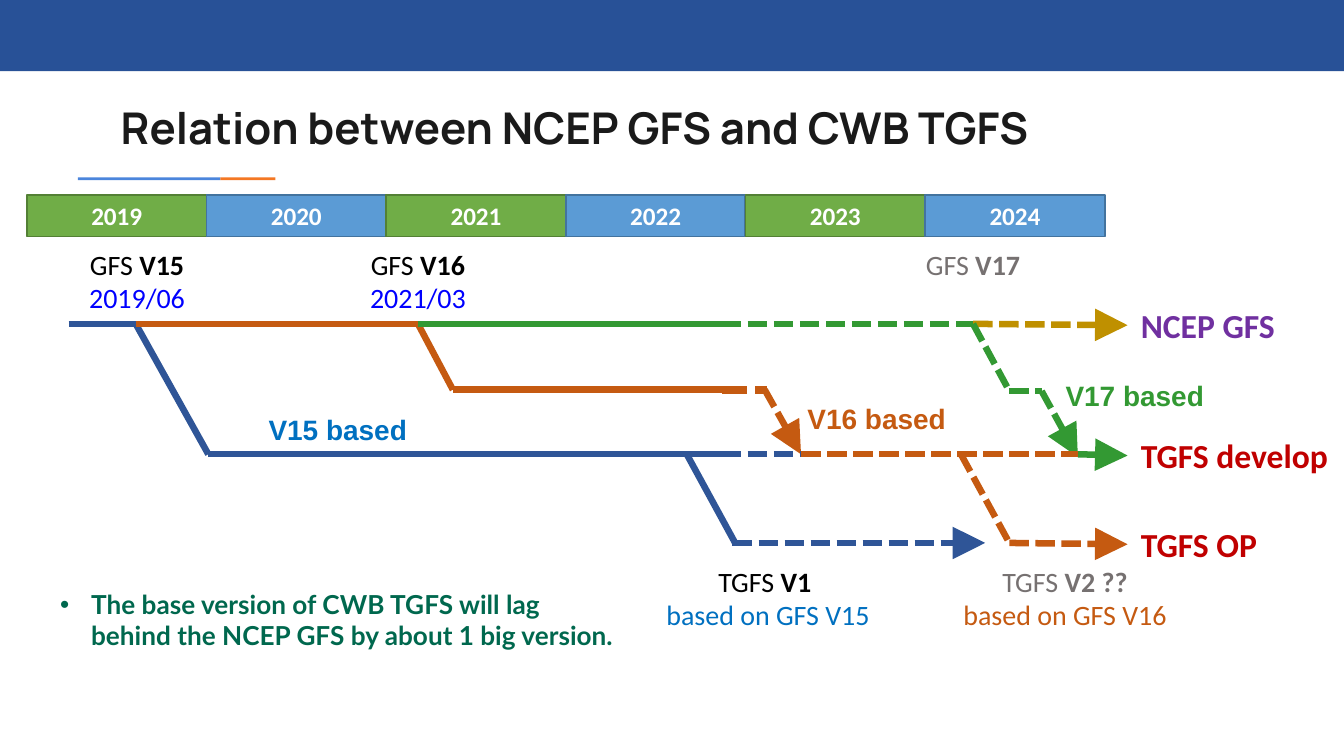
from lxml.etree import SubElement
from pptx import Presentation
from pptx.dml.color import RGBColor
from pptx.enum.shapes import MSO_CONNECTOR, MSO_SHAPE
from pptx.enum.text import MSO_ANCHOR, MSO_AUTO_SIZE, PP_ALIGN
from pptx.oxml.ns import qn
from pptx.util import Inches, Pt

COLORS = {
    "banner": "285197", "accent_blue": "4B85DC", "accent_orange": "F47723",
    "title": "1A1A1A", "note": "00684E", "black": "000000", "white": "FFFFFF",
    "navy": "2F5597", "orange": "C55A11", "green": "339933", "gold": "BF9000",
    "purple": "7030A0", "red": "C00000", "blue": "0070C0", "date": "0000FF",
    "gray": "767171", "year_green": "70AD47", "year_green_line": "538035",
    "year_blue": "5B9BD5", "year_blue_line": "43739E",
}


def rgb(name):
    return RGBColor.from_string(COLORS[name])


def style(r, size, color, font, bold=False):
    r.font.size = Pt(size)
    r.font.name = font
    r.font.bold = bold
    r.font.color.rgb = rgb(color)


def add_rect(slide, x, y, w, h, fill, line=None):
    s = slide.shapes.add_shape(MSO_SHAPE.RECTANGLE, Inches(x), Inches(y), Inches(w), Inches(h))
    s.shadow.inherit = False
    s.fill.solid()
    s.fill.fore_color.rgb = rgb(fill)
    if line:
        s.line.color.rgb = rgb(line)
        s.line.width = Pt(1)
    else:
        s.line.fill.background()
    return s


def add_text(slide, x, y, w, h, lines, size, font, align=PP_ALIGN.LEFT):
    s = slide.shapes.add_textbox(Inches(x), Inches(y), Inches(w), Inches(h))
    tf = s.text_frame
    tf.word_wrap = False
    tf.auto_size = MSO_AUTO_SIZE.SHAPE_TO_FIT_TEXT
    for i, runs in enumerate(lines):
        p = tf.add_paragraph() if i else tf.paragraphs[0]
        p.alignment = align
        p.text = "".join(text for text, _, _ in runs if text == "\v" and len(runs) == 1)
        for text, color, bold in runs:
            if text == "\v":
                p.add_line_break()
                continue
            r = p.add_run()
            r.text = text
            style(r, size, color, font, bold)
    return s


def add_segment(slide, start, end, color, dashed=False, arrow=False, width=3.5):
    s = slide.shapes.add_connector(MSO_CONNECTOR.STRAIGHT, *map(Inches, start + end))
    s.line.color.rgb = rgb(color)
    s.line.width = Pt(width)
    sp_pr = s._element.spPr
    ln = sp_pr.find(qn("a:ln"))
    if dashed:
        SubElement(ln, qn("a:prstDash")).set("val", "sysDash")
    if arrow:
        SubElement(ln, qn("a:tailEnd"), type="triangle", w="lg", len="lg")
    SubElement(sp_pr, qn("a:effectLst"))


def add_header(slide, x, y, w):
    add_rect(slide, x, y, w, 0.53, "banner")
    add_rect(slide, x + 0.58, y + 1.32, 1.06, 0.02, "accent_blue")
    add_rect(slide, x + 1.64, y + 1.32, 0.41, 0.02, "accent_orange")
    s = slide.shapes.add_textbox(Inches(x + 0.8), Inches(y + 0.65), Inches(8.41), Inches(0.59))
    tf = s.text_frame
    tf.word_wrap = True
    tf.vertical_anchor = MSO_ANCHOR.MIDDLE
    tf.margin_top = tf.margin_bottom = Inches(0.1)
    tf.text = "Relation between NCEP GFS and CWB TGFS"
    style(tf.paragraphs[0].runs[0], 23.4, "title", "Manrope", True)


def add_note(slide, x, y, w, h):
    s = add_text(slide, x, y, w, h, [[]], 14, "Lato")
    p = s.text_frame.paragraphs[0]
    p_pr = p._p.get_or_add_pPr()
    p_pr.set("marL", str(Inches(0.23)))
    p_pr.set("indent", str(-Inches(0.23)))
    SubElement(p_pr, qn("a:buFont")).set("typeface", "Arial")
    SubElement(p_pr, qn("a:buChar")).set("char", "•")
    p.text = "The base version of CWB TGFS will lag \vbehind the NCEP GFS by about 1 big version."
    for r in p.runs:
        style(r, 14, "note", "Lato", True)


def add_years(slide, x, y, w, h):
    years = range(2019, 2025)
    step = w / len(years)
    for i, year in enumerate(years):
        fill = "year_blue" if i % 2 else "year_green"
        s = add_rect(slide, x + i * step, y, step, h, fill, fill + "_line")
        tf = s.text_frame
        tf.text = str(year)
        tf.vertical_anchor = MSO_ANCHOR.MIDDLE
        p = tf.paragraphs[0]
        p.alignment = PP_ALIGN.CENTER
        style(p.runs[0], 13.5, "white", "Calibri", True)


def add_branches(slide, x, y, w):
    ncep, merge, develop, op = 0, 0.49, 0.97, 1.63
    v15, v16, v17, now = 0.5, 2.6, 6.73, 4.86
    v16_in, v17_in = 5.45, 7.51
    segments = [
        (v17, ncep, w, 0.01, "gold", True, True),
        (v17_in, develop, w, 0.98, "green", True, True),
        (v15, ncep, 1.04, develop, "navy"),
        (v16, ncep, 2.86, merge, "orange"),
        (5.18, merge, v16_in, develop, "orange", True, True),
        (now, merge, 5.2, merge, "orange", True, False, 4.5),
        (4.6, develop, 4.96, op, "navy"),
        (4.94, op, 6.82, op, "navy", True, True),
        (now, develop, v16_in, develop, "navy", True),
        (6.64, develop, 7, op, "orange", True),
        (7, op, w, 1.64, "orange", True, True),
        (v17, ncep, 7, 0.5, "green", True),
        (7.24, 0.5, v17_in, 0.99, "green", True, True),
        (7, 0.5, 7.24, 0.5, "green", True),
        (v16_in, develop, v17_in, develop, "orange", True),
        (now, ncep, v17, ncep, "green", True),
        (v15, ncep, v16, ncep, "orange"),
        (0, ncep, v15, ncep, "navy"),
        (1.04, develop, now, develop, "navy"),
        (2.86, merge, now, merge, "orange"),
        (v16, ncep, now, ncep, "green"),
    ]
    for x1, y1, x2, y2, *look in segments:
        add_segment(slide, (x + x1, y + y1), (x + x2, y + y2), *look)

    for text, level, width, color in [
        ("NCEP GFS", ncep, 1.21, "purple"),
        ("TGFS develop", develop, 1.6, "red"),
        ("TGFS OP", op, 1.08, "red"),
    ]:
        add_text(slide, x + w, y + level - 0.19, width, 0.4, [[(text, color, True)]], 18, "Calibri")

    for text, dx, dy, color in [
        ("V15 based", 1.39, 0.61, "blue"),
        ("V16 based", 5.4, 0.53, "orange"),
        ("V17 based", 7.32, 0.36, "green"),
    ]:
        add_text(slide, x + dx, y + dy, 1.24, 0.35, [[(text, color, True)]], 15, "Arial")


def add_captions(slide, x, y):
    for dx, version, color, date in [
        (0.05, "V15", "black", "2019/06"),
        (2.14, "V16", "black", "2021/03"),
        (6.27, "V17", "gray", None),
    ]:
        lines = [[("GFS ", color, False), (version, color, True)]]
        if date:
            lines.append([(date, "date", False)])
        height = 0.09 + 0.26 * len(lines)
        add_text(slide, x + dx, y, 0.92, height, lines, 15, "Calibri", PP_ALIGN.CENTER)

    for dx, version, color, base, base_color in [
        (4.34, "V1 ", "black", "based on GFS V15", "blue"),
        (6.55, "V2 ??", "gray", "based on GFS V16", "orange"),
    ]:
        runs = [("TGFS ", color, False), (version, color, True),
                ("\v", color, True), (base, base_color, False)]
        add_text(slide, x + dx, y + 2.36, 1.73, 0.61, [runs], 15, "Calibri", PP_ALIGN.CENTER)


def main():
    prs = Presentation()
    prs.slide_width = Inches(10)
    prs.slide_height = prs.slide_width * 9 // 16
    slide = prs.slides.add_slide(prs.slide_layouts[6])
    add_header(slide, 0, 0, 10)
    add_note(slide, 0.35, 4.33, 4.37, 0.57)
    add_branches(slide, 0.51, 2.41, 7.88)
    add_captions(slide, 0.51, 1.79)
    add_years(slide, 0.2, 1.45, 8.02, 0.31)
    prs.save("out.pptx")


if __name__ == "__main__":
    main()
